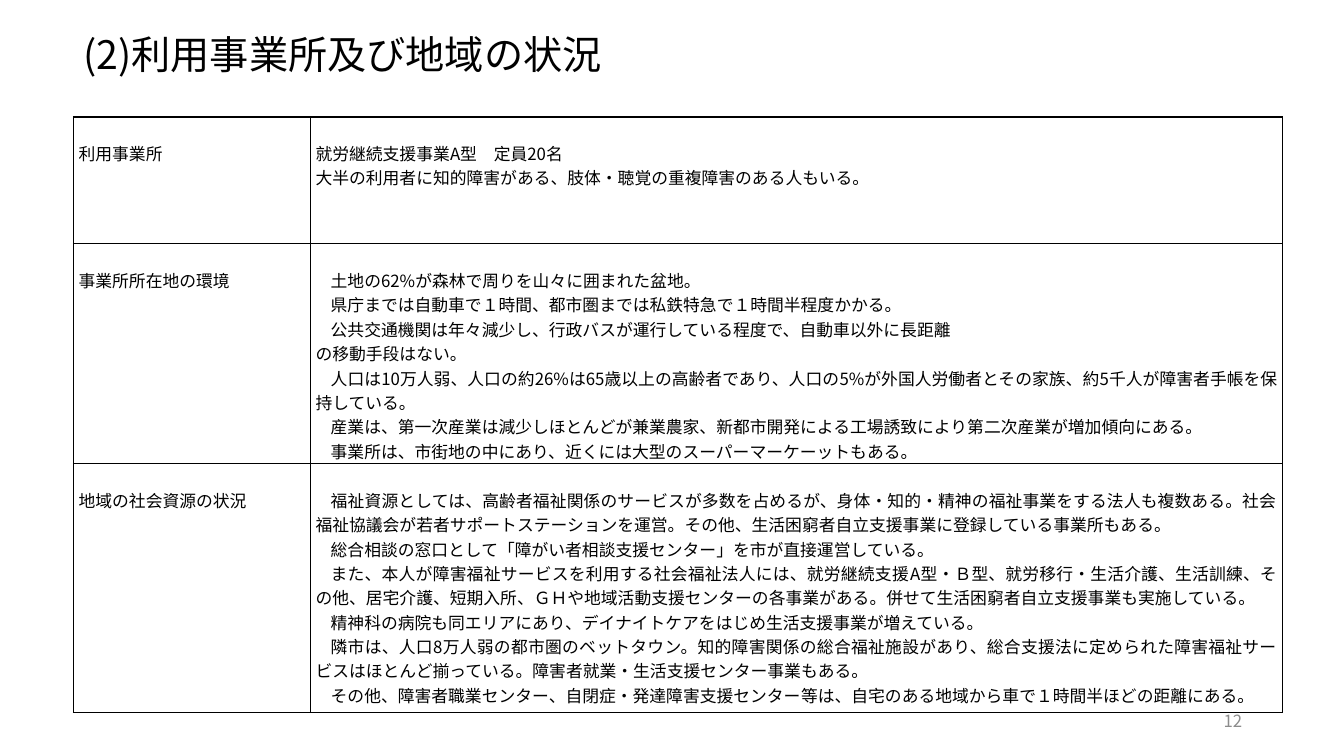
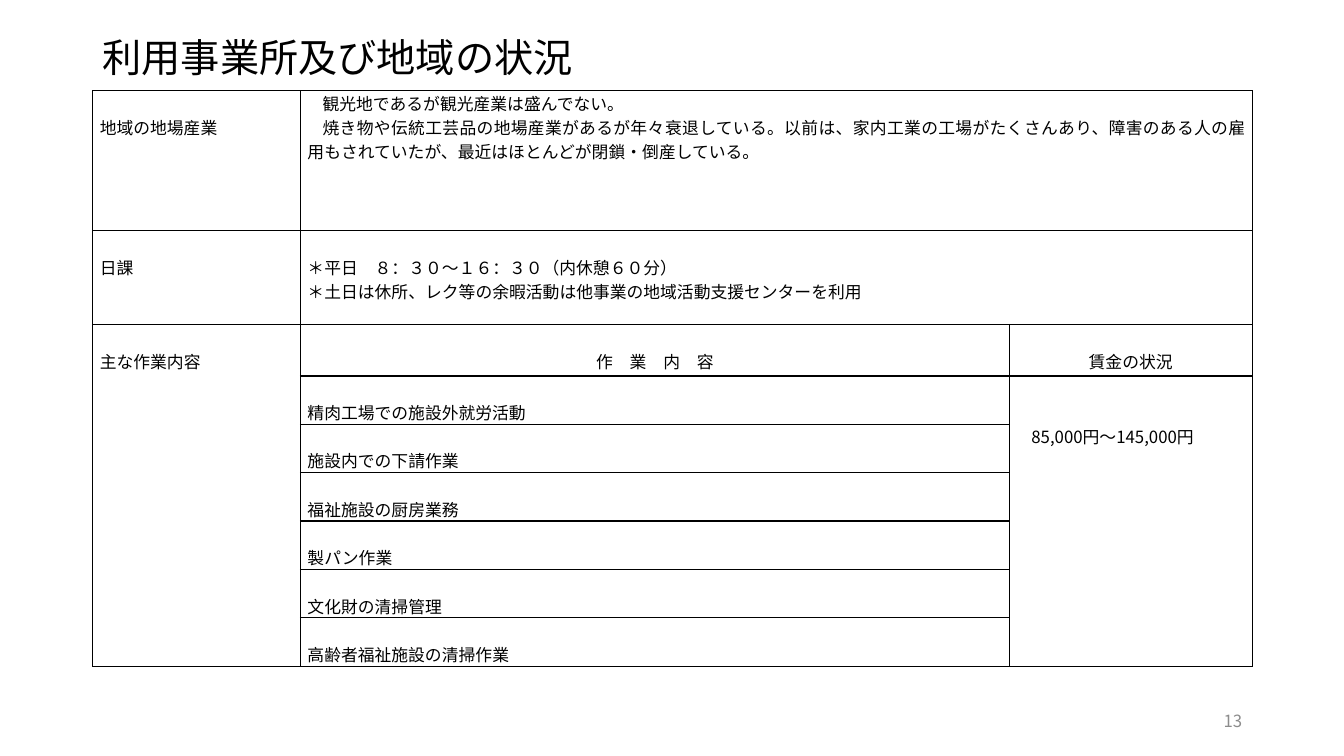
from dataclasses import dataclass
from lxml import etree
from pptx import Presentation
from pptx.dml.color import RGBColor
from pptx.enum.text import MSO_ANCHOR, PP_ALIGN
from pptx.oxml.ns import qn
from pptx.util import Inches, Pt

JUSTIFY, CENTER = PP_ALIGN.JUSTIFY, PP_ALIGN.CENTER
LEFT, RIGHT = PP_ALIGN.LEFT, PP_ALIGN.RIGHT
MIDDLE, TOP = MSO_ANCHOR.MIDDLE, MSO_ANCHOR.TOP


class Theme:
    font = "Noto Sans CJK JP"
    ink = RGBColor(0, 0, 0)
    muted = RGBColor(0x8C, 0x8C, 0x8C)
    paper = RGBColor(0xFF, 0xFF, 0xFF)
    title, body = Pt(28), Pt(12)
    border = Pt(1)
    line_height = Inches(0.24)
    first_line = Inches(0.15)


@dataclass
class Cell:
    lines: tuple
    skip: int = 1
    indent: bool = False
    flush: tuple = ()
    align: object = JUSTIFY


def label(text, align=JUSTIFY):
    return Cell((text,), align=align)


ENVIRONMENT = (
    "土地の62%が森林で周りを山々に囲まれた盆地。",
    "県庁までは自動車で１時間、都市圏までは私鉄特急で１時間半程度かかる。",
    "公共交通機関は年々減少し、行政バスが運行している程度で、自動車以外に長距離",
    "の移動手段はない。",
    "人口は10万人弱、人口の約26%は65歳以上の高齢者であり、人口の5%が外国人労働者とその家族、"
    "約5千人が障害者手帳を保持している。",
    "産業は、第一次産業は減少しほとんどが兼業農家、新都市開発による工場誘致により第二次産業が増加傾向にある。",
    "事業所は、市街地の中にあり、近くには大型のスーパーマーケーットもある。",
)
RESOURCES = (
    "福祉資源としては、高齢者福祉関係のサービスが多数を占めるが、身体・知的・精神の福祉事業をする法人も複数ある。"
    "社会福祉協議会が若者サポートステーションを運営。その他、生活困窮者自立支援事業に登録している事業所もある。",
    "総合相談の窓口として「障がい者相談支援センター」を市が直接運営している。",
    "また、本人が障害福祉サービスを利用する社会福祉法人には、就労継続支援A型・Ｂ型、就労移行・生活介護、生活訓練、"
    "その他、居宅介護、短期入所、ＧＨや地域活動支援センターの各事業がある。併せて生活困窮者自立支援事業も実施している。",
    "精神科の病院も同エリアにあり、デイナイトケアをはじめ生活支援事業が増えている。",
    "隣市は、人口8万人弱の都市圏のベットタウン。知的障害関係の総合福祉施設があり、総合支援法に定められた"
    "障害福祉サービスはほとんど揃っている。障害者就業・生活支援センター事業もある。",
    "その他、障害者職業センター、自閉症・発達障害支援センター等は、自宅のある地域から車で１時間半ほどの距離にある。",
)
INDUSTRY = (
    "観光地であるが観光産業は盛んでない。",
    "焼き物や伝統工芸品の地場産業があるが年々衰退している。以前は、家内工業の工場がたくさんあり、"
    "障害のある人の雇用もされていたが、最近はほとんどが閉鎖・倒産している。",
)
JOBS = ["精肉工場での施設外就労活動", "施設内での下請作業", "福祉施設の厨房業務",
        "製パン作業", "文化財の清掃管理", "高齢者福祉施設の清掃作業"]

SLIDES = [
    dict(
        title="(2)利用事業所及び地域の状況", number="12",
        left=0.73, title_top=0.37, table_top=1.16, inset=0.05,
        cols=[2.35, 9.64], rows=[1.26, 2.18, 2.47], merges=[],
        cells={
            (0, 0): label("利用事業所"),
            (0, 1): Cell(("就労継続支援事業A型　定員20名",
                          "大半の利用者に知的障害がある、肢体・聴覚の重複障害のある人もいる。")),
            (1, 0): label("事業所所在地の環境"),
            (1, 1): Cell(ENVIRONMENT, indent=True, flush=(3,)),
            (2, 0): label("地域の社会資源の状況"),
            (2, 1): Cell(RESOURCES, indent=True),
        }),
    dict(
        title="利用事業所及び地域の状況", number="13",
        left=0.92, title_top=0.4, table_top=0.9, inset=0.07,
        cols=[2.06, 7.03, 2.41], rows=[1.39, 0.93, 0.51] + [0.48] * len(JOBS),
        merges=[((0, 1), (0, 2)), ((1, 1), (1, 2)),
                ((2, 0), (8, 0)), ((3, 2), (8, 2))],
        cells={
            (0, 0): label("地域の地場産業"),
            (0, 1): Cell(INDUSTRY, skip=0, indent=True),
            (1, 0): label("日課"),
            (1, 1): Cell(("＊平日　８：３０～１６：３０（内休憩６０分）",
                          "＊土日は休所、レク等の余暇活動は他事業の地域活動支援センターを利用")),
            (2, 0): label("主な作業内容"),
            (2, 1): label("作　業　内　容", CENTER),
            (2, 2): label("賃金の状況", CENTER),
            (3, 2): Cell(("85,000円～145,000円",), skip=2, indent=True, align=LEFT),
            **{(3 + i, 1): label(job) for i, job in enumerate(JOBS)},
        }),
]


def style_runs(p, size, color):
    for r in p.runs:
        r.font.size, r.font.name = size, Theme.font
        r.font.color.rgb = color
        ea = etree.SubElement(r._r.get_or_add_rPr(), qn("a:ea"))
        ea.set("typeface", Theme.font)


def add_text(s, text, box, size, color, align=LEFT, spacing=1.0):
    sp = s.shapes.add_textbox(*(Inches(v) for v in box))
    tf = sp.text_frame
    tf.word_wrap = True
    tf.vertical_anchor = MIDDLE
    tf.text = text
    p = tf.paragraphs[0]
    p.alignment, p.line_spacing = align, spacing
    style_runs(p, size, color)


def style_cell(cell, inset):
    cell.margin_left = cell.margin_right = Inches(inset)
    cell.margin_top = cell.margin_bottom = 0
    cell.vertical_anchor = TOP
    cell.fill.solid()
    cell.fill.fore_color.rgb = Theme.paper
    tcPr = cell._tc.get_or_add_tcPr()
    for i, side in enumerate(("lnL", "lnR", "lnT", "lnB")):
        ln = etree.Element(qn("a:" + side), w=str(Theme.border))
        fill = etree.SubElement(ln, qn("a:solidFill"))
        etree.SubElement(fill, qn("a:srgbClr"), val=str(Theme.ink))
        tcPr.insert(i, ln)


def fill_cell(cell, content):
    cell.margin_top = content.skip * Theme.line_height
    tf = cell.text_frame
    tf.text = "\n".join(content.lines)
    for i, p in enumerate(tf.paragraphs):
        p.alignment = content.align
        if content.indent and i not in content.flush:
            p._p.get_or_add_pPr().set("indent", str(Theme.first_line))
        style_runs(p, Theme.body, Theme.ink)


def add_grid(s, page):
    cols, rows = page["cols"], page["rows"]
    box = (page["left"], page["table_top"], sum(cols), sum(rows))
    table = s.shapes.add_table(len(rows), len(cols), *(Inches(v) for v in box)).table
    table.first_row = table.horz_banding = False
    for col, width in zip(table.columns, cols):
        col.width = Inches(width)
    for row, height in zip(table.rows, rows):
        row.height = Inches(height)
    for cell in table.iter_cells():
        style_cell(cell, page["inset"])
    for first, last in page["merges"]:
        table.cell(*first).merge(table.cell(*last))
    for place, content in page["cells"].items():
        fill_cell(table.cell(*place), content)


def main():
    prs = Presentation()
    prs.slide_width, prs.slide_height = Inches(13.33), Inches(7.5)
    for page in SLIDES:
        s = prs.slides.add_slide(prs.slide_layouts[6])
        add_text(s, page["title"], (page["left"], page["title_top"], 11.5, 0.39),
                 Theme.title, Theme.ink, spacing=0.9)
        add_text(s, page["number"], (9.42, 6.95, 3, 0.4),
                 Theme.body, Theme.muted, RIGHT)
        add_grid(s, page)
    prs.save("out.pptx")


if __name__ == "__main__":
    main()
